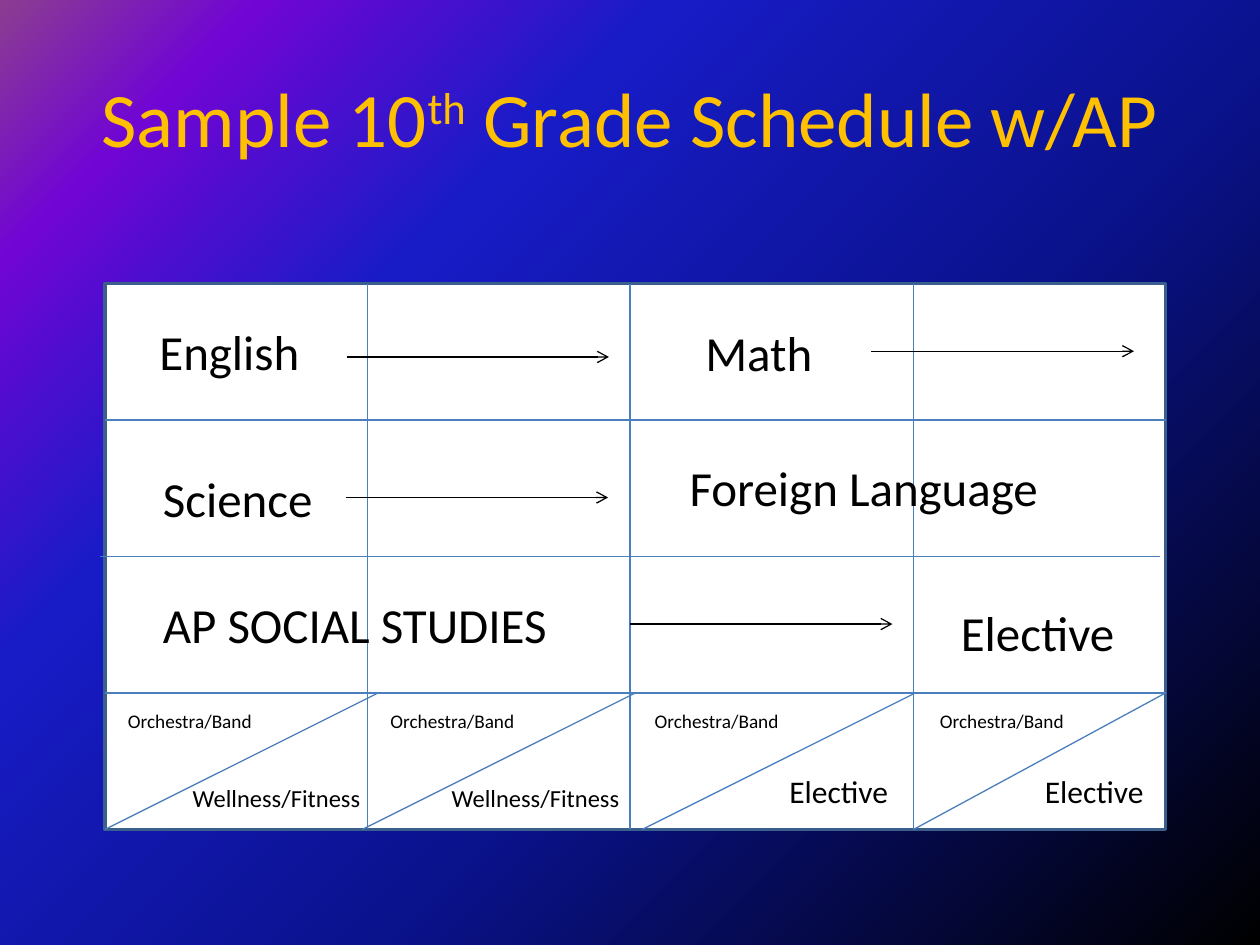
from pptx import Presentation
from pptx.dml.color import RGBColor
from pptx.enum.shapes import MSO_CONNECTOR, MSO_SHAPE
from pptx.enum.text import MSO_ANCHOR, PP_ALIGN
from pptx.oxml import parse_xml
from pptx.oxml.ns import nsdecls, qn
from pptx.util import Pt
from lxml.etree import SubElement

GOLD = RGBColor(0xFF, 0xC0, 0x00)
WHITE = RGBColor(0xFF, 0xFF, 0xFF)
BLACK = RGBColor(0x00, 0x00, 0x00)
BLUE = RGBColor(0x4B, 0x7E, 0xBC)
NAVY = RGBColor(0x3A, 0x5F, 0x8C)
BACKDROP = [
    (0, RGBColor(0x00, 0x00, 0x00)),
    (40, RGBColor(0x0A, 0x12, 0x8C)),
    (70, RGBColor(0x18, 0x1C, 0xC7)),
    (88, RGBColor(0x70, 0x05, 0xD4)),
    (100, RGBColor(0x8C, 0x3D, 0x91)),
]

COLUMNS = [60, 210, 360, 522, 666]
ROWS = [162 + 78 * row for row in range(5)]
LEFT, RIGHT = COLUMNS[0], COLUMNS[-1]
TOP, BOTTOM = ROWS[0], ROWS[-1]
ARROW_LENGTH = 150
ARROW_STARTS = [(198, 204), (197.5, 284.3), (498, 200.7), (360, 356.6)]
DIAGONALS = [(60, 216), (207, 363), (367, 523), (522, 666)]
SUBJECTS = [
    ("English", 84, 180, 95),
    ("Science", 86, 264, 101),
    ("Math", 396, 181, 76),
    ("AP SOCIAL STUDIES", 86, 336, 236),
    ("Foreign Language", 387, 258, 215),
    ("Elective", 542, 341, 103),
]


class Schedule:
    """Draws the elements of a class schedule on one page."""

    font = "Calibri"
    line_width = 0.75

    def __init__(self, page):
        self.page = page

    def backdrop(self, stops):
        fill = self.page.background.fill
        fill.gradient()
        stop_list = "".join(
            f'<a:gs pos="{position * 1000}"><a:srgbClr val="{color}"/></a:gs>'
            for position, color in stops
        )
        gradient = parse_xml(
            f'<a:gradFill rotWithShape="1" {nsdecls("a")}><a:gsLst>{stop_list}</a:gsLst>'
            '<a:path path="circle"><a:fillToRect l="100000" t="100000"/></a:path></a:gradFill>'
        )
        old = self.page.element.find(".//" + qn("a:gradFill"))
        old.getparent().replace(old, gradient)

    def panel(self, left, top, width, height):
        box = self.page.shapes.add_shape(
            MSO_SHAPE.RECTANGLE, Pt(left), Pt(top), Pt(width), Pt(height)
        )
        box.shadow.inherit = False
        box.fill.solid()
        box.fill.fore_color.rgb = WHITE
        box.line.color.rgb = NAVY
        box.line.width = Pt(2)

    def line(self, x1, y1, x2, y2, color=BLUE):
        line = self.page.shapes.add_connector(
            MSO_CONNECTOR.STRAIGHT, Pt(x1), Pt(y1), Pt(x2), Pt(y2)
        )
        line.line.color.rgb = color
        line.line.width = Pt(self.line_width)
        SubElement(line._element.spPr, qn("a:effectLst"))
        return line

    def arrow(self, left, top):
        arrow = self.line(left, top, left + ARROW_LENGTH, top, BLACK)
        SubElement(arrow.line._get_or_add_ln(), qn("a:tailEnd"), type="arrow")

    def text(self, text, left, top, width, height, size, color=BLACK, wrap=False):
        box = self.page.shapes.add_textbox(Pt(left), Pt(top), Pt(width), Pt(height))
        box.text_frame.word_wrap = wrap
        box.text_frame.text = text
        para = box.text_frame.paragraphs[0]
        self.style(para.runs[0], size, color)
        return box

    def style(self, span, size, color):
        span.font.name = self.font
        span.font.size = Pt(size)
        span.font.color.rgb = color

    def title(self, before, raised, after):
        box = self.text(before, 36, 21.6, 648, 90, 44, GOLD, wrap=True)
        box.text_frame.vertical_anchor = MSO_ANCHOR.MIDDLE
        para = box.text_frame.paragraphs[0]
        para.alignment = PP_ALIGN.CENTER
        for text in (raised, after):
            span = para.add_run()
            span.text = text
            self.style(span, 44, GOLD)
        para.runs[1].font._element.set("baseline", "30000")


def main():
    deck = Presentation()
    deck.slide_width, deck.slide_height = Pt(720), Pt(540)
    schedule = Schedule(deck.slides.add_slide(deck.slide_layouts[6]))
    schedule.backdrop(BACKDROP)
    schedule.title("Sample 10", "th", " Grade Schedule w/AP")
    schedule.panel(LEFT, TOP, RIGHT - LEFT, BOTTOM - TOP)

    for x in COLUMNS[1:-1]:
        schedule.line(x, BOTTOM, x, TOP)
    for y, shift in zip(ROWS[1:-1], (0, -3, 0)):
        schedule.line(RIGHT + shift, y, LEFT + shift, y)
    for start, end in DIAGONALS:
        schedule.line(start, BOTTOM, end, ROWS[3])
    for left, top in ARROW_STARTS:
        schedule.arrow(left, top)

    for subject, left, top, width in SUBJECTS:
        schedule.text(subject, left, top, width, 41, 28)
    for left in (66, 216, 367, 530):
        schedule.text("Orchestra/Band", left, 402, 86, 21, 11, wrap=True)
    for left in (103, 251):
        schedule.text("Wellness/Fitness", left, 444, 112, 24, 14)
    for left in (444, 590):
        schedule.text("Elective", left, 437.5, 72, 29, 18)

    deck.save("out.pptx")


if __name__ == "__main__":
    main()
